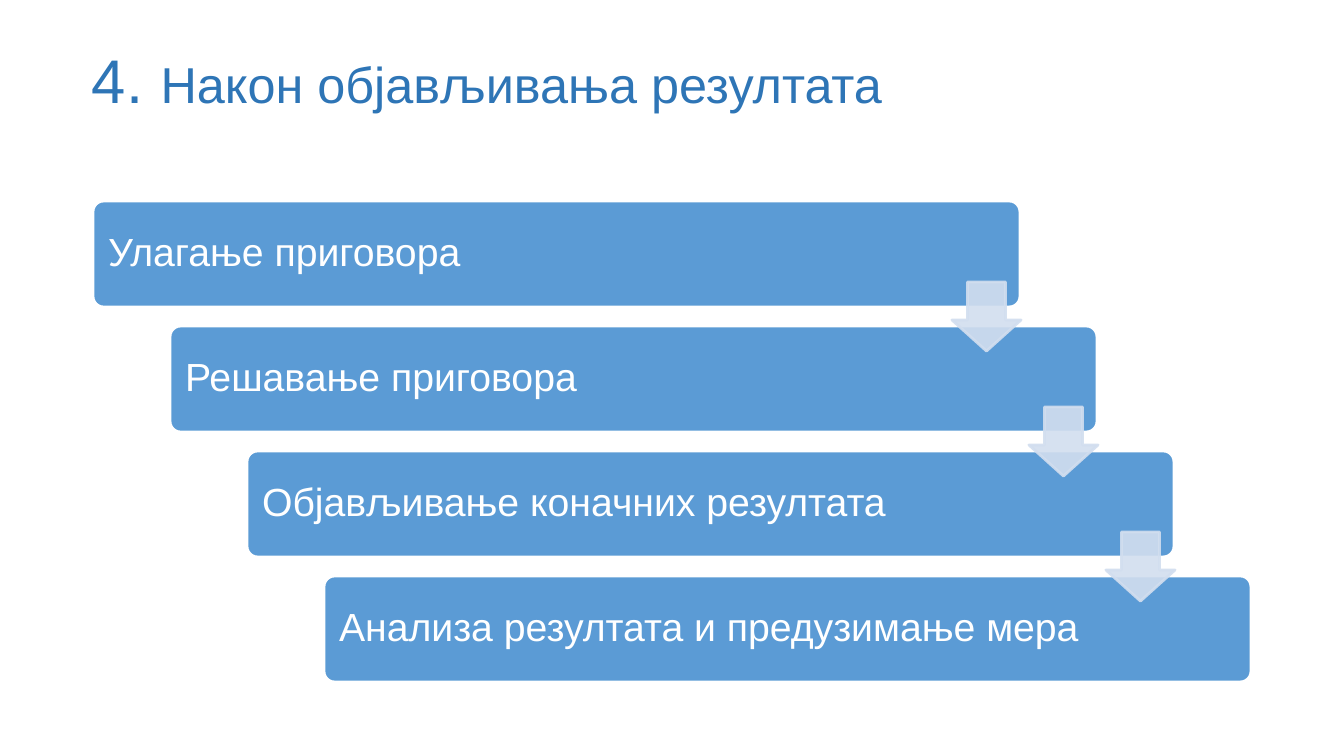
from lxml import etree
from pptx import Presentation
from pptx.dml.color import RGBColor
from pptx.enum.shapes import MSO_SHAPE
from pptx.enum.text import MSO_ANCHOR, PP_ALIGN
from pptx.oxml.ns import qn
from pptx.util import Pt

# Content
TITLE = [("4. ", 44), ("Након објављивања резултата", 36)]
STEPS = [
    "Улагање приговора",
    "Решавање приговора",
    "Објављивање коначних резултата",
    "Анализа резултата и предузимање мера",
]

# Layout in px
PX = 914400 / 100.8
SLIDE_WIDTH, SLIDE_HEIGHT = 1344, 756
TITLE_BOX = (92, 50, 1159, 64)
FIRST_LEFT, FIRST_TOP = 93, 201
SHIFT_X, SHIFT_Y = 77, 125
BAR_WIDTH, BAR_HEIGHT = 927, 106
ARROW_X, ARROW_Y, ARROW_SIZE = 859, 81, 69
BAR_INSET = 12

BLUE, DARK_BLUE, PALE_BLUE, WHITE = "5B9BD5", "2E75B6", "D2DEEF", "FFFFFF"


def px(length):
    return round(length * PX)


def color(value):
    return RGBColor.from_string(value)


def write_text(shape, runs, font_color, inset=0, anchor=MSO_ANCHOR.MIDDLE):
    frame = shape.text_frame
    frame.word_wrap = True
    frame.vertical_anchor = anchor
    frame.margin_left = frame.margin_right = px(inset)
    frame.margin_top = frame.margin_bottom = px(inset)
    paragraph = frame.paragraphs[0]
    paragraph.alignment = PP_ALIGN.LEFT
    paragraph.line_spacing = 0.9
    for text, size in runs:
        run = paragraph.add_run()
        run.text = text
        run.font.name = "Arial"
        run.font.size = Pt(size)
        run.font.color.rgb = color(font_color)


def add_block(slide, kind, box, adjustments, fill, line, opacity=100):
    shape = slide.shapes.add_shape(kind, *map(px, box))
    shape.shadow.inherit = False
    for index, value in enumerate(adjustments):
        shape.adjustments[index] = value
    shape.fill.solid()
    shape.fill.fore_color.rgb = color(fill)
    shape.line.color.rgb = color(line)
    shape.line.width = Pt(2)
    if opacity < 100:
        for element in shape._element.spPr.iter(qn("a:srgbClr")):
            etree.SubElement(element, qn("a:alpha"), val=str(opacity * 1000))
    return shape


def main():
    presentation = Presentation()
    presentation.slide_width = px(SLIDE_WIDTH)
    presentation.slide_height = px(SLIDE_HEIGHT)
    slide = presentation.slides.add_slide(presentation.slide_layouts[6])

    # Title
    title = slide.shapes.add_textbox(*map(px, TITLE_BOX))
    write_text(title, TITLE, DARK_BLUE, anchor=MSO_ANCHOR.TOP)

    # Staircase of steps
    corners = [(FIRST_LEFT + i * SHIFT_X, FIRST_TOP + i * SHIFT_Y)
               for i in range(len(STEPS))]
    for step, (left, top) in zip(STEPS, corners):
        bar = add_block(slide, MSO_SHAPE.ROUNDED_RECTANGLE,
                        (left, top, BAR_WIDTH, BAR_HEIGHT), [0.1], BLUE, WHITE)
        write_text(bar, [(step, 28)], WHITE, inset=BAR_INSET)

    # Arrows from each step to the next
    for left, top in corners[:-1]:
        add_block(slide, MSO_SHAPE.DOWN_ARROW,
                  (left + ARROW_X, top + ARROW_Y, ARROW_SIZE, ARROW_SIZE),
                  [0.55, 0.45], PALE_BLUE, PALE_BLUE, opacity=90)

    presentation.save("out.pptx")


if __name__ == "__main__":
    main()
